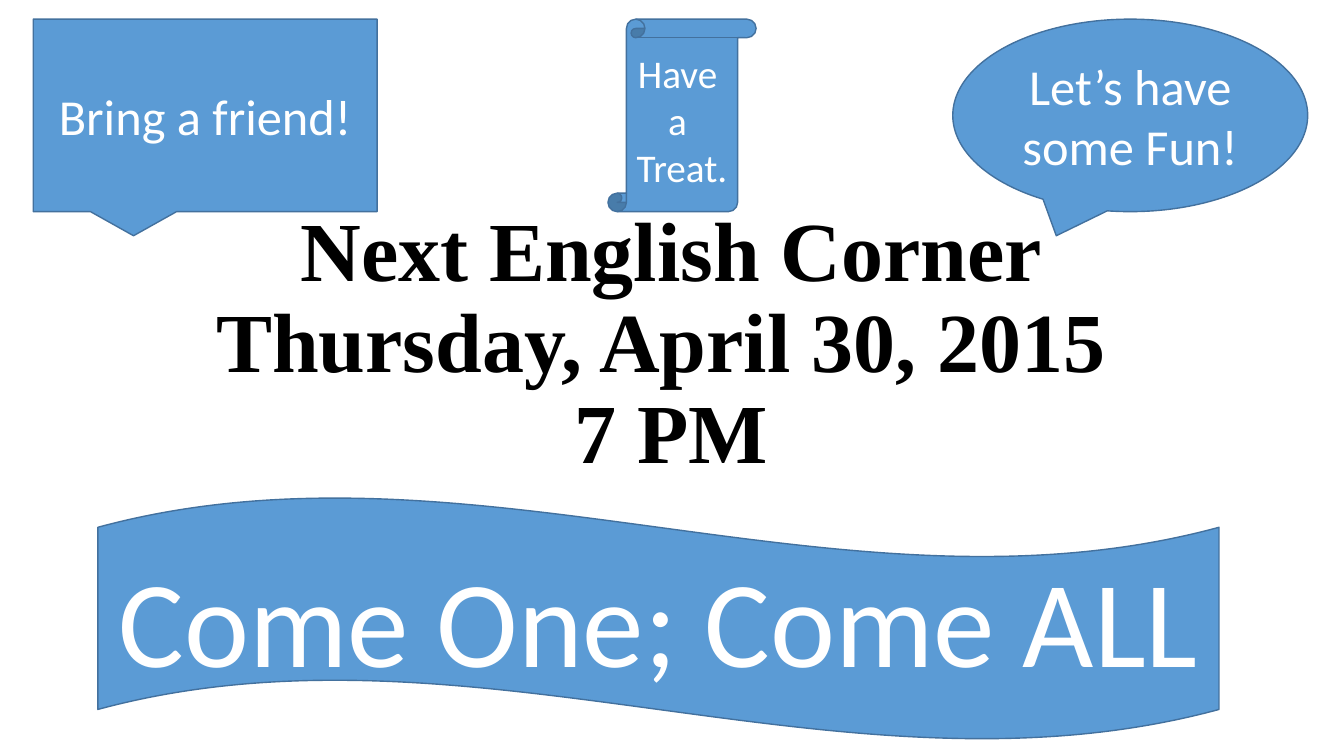
from pptx import Presentation
from pptx.dml.color import RGBColor
from pptx.enum.shapes import MSO_SHAPE
from pptx.enum.text import MSO_ANCHOR, MSO_AUTO_SIZE, PP_ALIGN
from pptx.util import Inches, Pt

CENTER, MIDDLE = PP_ALIGN.CENTER, MSO_ANCHOR.MIDDLE
RECT_CALLOUT = MSO_SHAPE.RECTANGULAR_CALLOUT
OVAL_CALLOUT = MSO_SHAPE.OVAL_CALLOUT
SCROLL, WAVE = MSO_SHAPE.VERTICAL_SCROLL, MSO_SHAPE.WAVE
TITLE_ONLY = 5

THEME = {
    "fill": RGBColor(0x5B, 0x9B, 0xD5),
    "outline": RGBColor(0x43, 0x71, 0x9E),
    "light": RGBColor(0xFF, 0xFF, 0xFF),
    "dark": RGBColor(0x00, 0x00, 0x00),
    "body_font": "Calibri",
    "title_font": "Times New Roman",
    "title": 60, "banner": 88, "callout": 36, "scroll": 28,
}


def place(shape, left, top, width, height):
    box = {"left": left, "top": top, "width": width, "height": height}
    for side, inches in box.items():
        setattr(shape, side, Inches(inches))


def write(shape, lines, **font_format):
    frame = shape.text_frame
    frame.word_wrap = True
    frame.auto_size = MSO_AUTO_SIZE.NONE
    frame.vertical_anchor = MIDDLE
    frame.text = lines
    for paragraph in frame.paragraphs:
        paragraph.alignment = CENTER
        for run in paragraph.runs:
            run.font.color.rgb = font_format["color"]
            for key in ("name", "size", "bold"):
                setattr(run.font, key, font_format[key])


prs = Presentation()
prs.slide_width, prs.slide_height = Inches(13.33), Inches(7.5)
slide = prs.slides.add_slide(prs.slide_layouts[TITLE_ONLY])

# Event title: three lines in one paragraph
event = slide.shapes.title
place(event, 0.91, 2.05, 11.5, 2.75)
write(event, "Next English Corner\vThursday, April 30, 2015 \v7 PM",
      name=THEME["title_font"], size=Pt(THEME["title"]), bold=True,
      color=THEME["dark"])
event.text_frame.paragraphs[0].line_spacing = 0.9

# Invitations: a row along the top and a banner at the bottom
ROW_TOP, ROW_HEIGHT = 0.19, 1.91
invitations = [
    (OVAL_CALLOUT, (9.45, ROW_TOP, 3.52, ROW_HEIGHT), "callout", "Let’s have some Fun!"),
    (RECT_CALLOUT, (0.33, ROW_TOP, 3.41, ROW_HEIGHT), "callout", "Bring a friend!"),
    (WAVE, (0.97, 4.93, 11.12, 2.41), "banner", "Come One; Come ALL"),
    (SCROLL, (6.03, ROW_TOP, 1.47, ROW_HEIGHT), "scroll", "Have \na \nTreat."),
]
for outline, box, level, message in invitations:
    invitation = slide.shapes.add_shape(outline, 0, 0, 0, 0)
    place(invitation, *box)
    invitation.shadow.inherit = False
    invitation.fill.solid()
    invitation.fill.fore_color.rgb = THEME["fill"]
    invitation.line.color.rgb = THEME["outline"]
    invitation.line.width = Pt(1)
    write(invitation, message, name=THEME["body_font"], size=Pt(THEME[level]),
          bold=False, color=THEME["light"])

prs.save("out.pptx")
